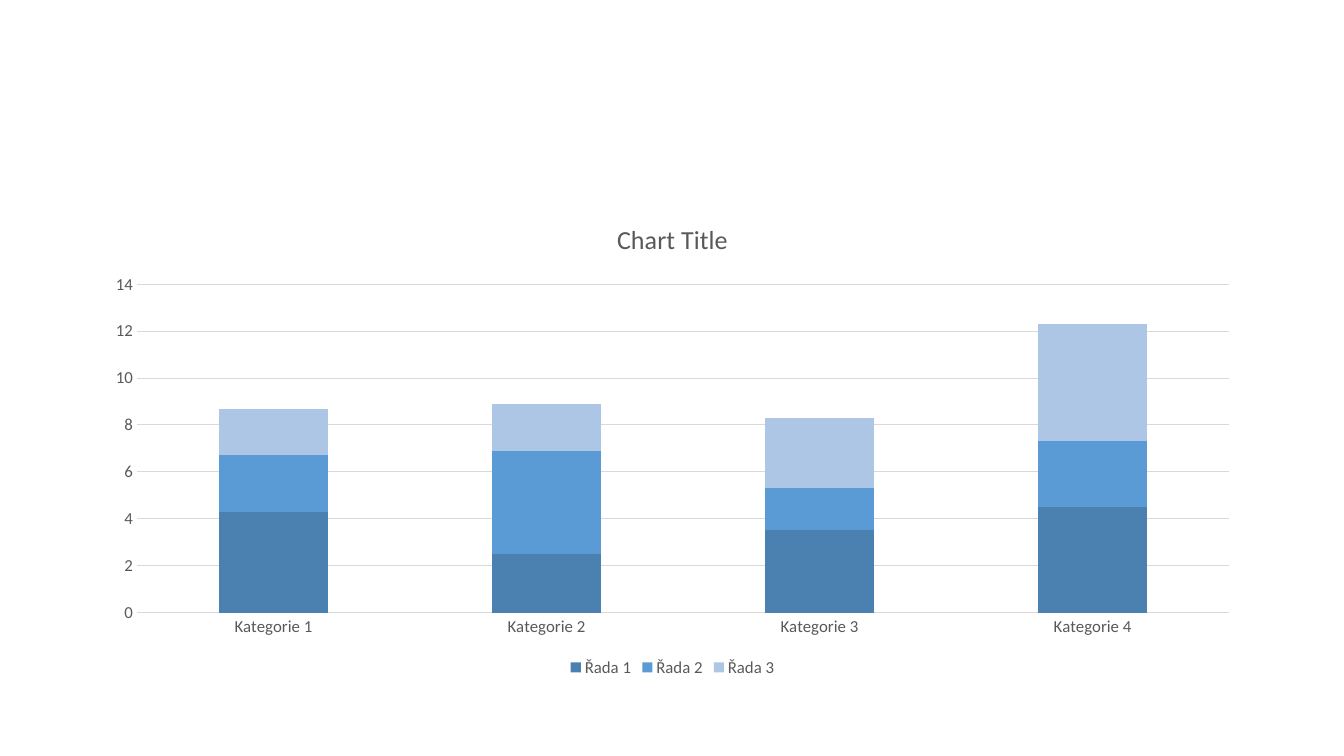
"""Build a slide with a stacked column chart of three series."""
from pptx import Presentation
from pptx.chart.data import CategoryChartData
from pptx.dml.color import RGBColor
from pptx.enum.chart import XL_CHART_TYPE, XL_LEGEND_POSITION, XL_TICK_MARK
from pptx.util import Inches, Pt

GRAY = RGBColor(0x59, 0x59, 0x59)
GRID = RGBColor(0xD9, 0xD9, 0xD9)
DARK_BLUE = RGBColor(0x4B, 0x81, 0xB1)
BLUE = RGBColor(0x5B, 0x9B, 0xD5)
LIGHT_BLUE = RGBColor(0xAD, 0xC6, 0xE5)
SERIES = [
    ("Řada 1", (4.3, 2.5, 3.5, 4.5), DARK_BLUE),
    ("Řada 2", (2.4, 4.4, 1.8, 2.8), BLUE),
    ("Řada 3", (2, 2, 3, 5), LIGHT_BLUE),
]


def style_font(font, size=12):
    font.name = "Calibri"
    font.size = Pt(size)
    font.bold = False
    font.color.rgb = GRAY


prs = Presentation()
prs.slide_width = Inches(13.33)
prs.slide_height = Inches(7.5)
s = prs.slides.add_slide(prs.slide_layouts[6])

data = CategoryChartData()
data.categories = [f"Kategorie {n}" for n in range(1, 5)]
for name, values, _ in SERIES:
    data.add_series(name, values)
chart = s.shapes.add_chart(
    XL_CHART_TYPE.COLUMN_STACKED,
    Inches(0.92), Inches(2), Inches(11.5), Inches(4.76), data,
).chart
style_font(chart.font)

chart.has_title = True
p = chart.chart_title.text_frame.paragraphs[0]
r = p.add_run()
r.text = "Chart Title"
style_font(r.font, size=18.6)
chart.chart_title.include_in_layout = False

chart.has_legend = True
chart.legend.position = XL_LEGEND_POSITION.BOTTOM
chart.legend.include_in_layout = False
style_font(chart.legend.font)

for axis in (chart.category_axis, chart.value_axis):
    axis.major_tick_mark = XL_TICK_MARK.NONE
    axis.minor_tick_mark = XL_TICK_MARK.NONE
    axis.format.line.fill.background()
    style_font(axis.tick_labels.font)
chart.value_axis.minimum_scale = 0
chart.value_axis.maximum_scale = 14
chart.value_axis.major_unit = 2
grid = chart.value_axis.major_gridlines.format.line
grid.color.rgb = GRID
grid.width = Pt(0.75)

plot = chart.plots[0]
plot.gap_width = 150
plot.overlap = 100
plot.vary_by_categories = False
for series, (_, _, color) in zip(plot.series, SERIES):
    series.format.fill.solid()
    series.format.fill.fore_color.rgb = color

prs.save("out.pptx")
